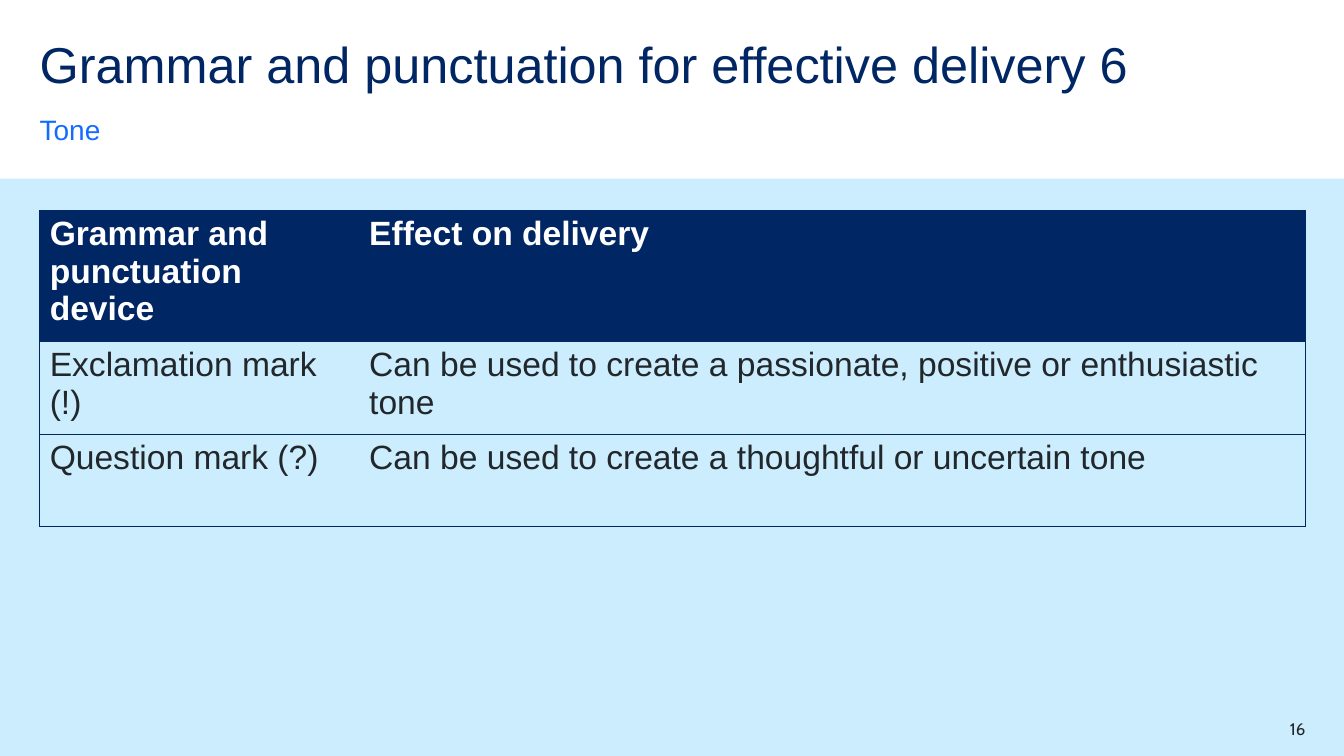
from lxml import etree
from pptx import Presentation
from pptx.dml.color import RGBColor
from pptx.enum import shapes, text
from pptx.oxml import ns
from pptx.util import Cm, Pt

HUES = {"navy": "002664", "blue": "146CFD", "sky": "CBEDFD",
        "ink": "22272B", "white": "FFFFFF"}


def style(run, size, hue, face="Arial", bold=False):
    font = run.font
    font.name, font.size, font.bold = face, Pt(size), bold
    font.color.rgb = RGBColor.from_string(HUES[hue])


def edge(cell, sides):
    """Draw thin navy borders on the given sides; clear the others."""
    props = cell._tc.get_or_add_tcPr()
    for spot, side in enumerate("LRTB"):
        line = etree.Element(ns.qn(f"a:ln{side}"), w=str(Pt(0.5)))
        if side in sides:
            fill = etree.SubElement(line, ns.qn("a:solidFill"))
            etree.SubElement(fill, ns.qn("a:srgbClr"), val=HUES["navy"])
        else:
            etree.SubElement(line, ns.qn("a:noFill"))
        props.insert(spot, line)


deck = Presentation()
deck.slide_width, deck.slide_height = Cm(33.87), Cm(19.05)
slide = deck.slides.add_slide(deck.slide_layouts[6])

# Lower panel
panel = slide.shapes.add_shape(
    shapes.MSO_SHAPE.RECTANGLE, 0, Cm(4.5), Cm(33.87), Cm(14.55))
panel.shadow.inherit = False
panel.fill.solid()
panel.fill.fore_color.rgb = RGBColor.from_string(HUES["sky"])
panel.line.fill.background()

# Title, subtitle and page number
top, low = text.MSO_ANCHOR.TOP, text.MSO_ANCHOR.BOTTOM
left, right = text.PP_ALIGN.LEFT, text.PP_ALIGN.RIGHT
labels = [
    ("Grammar and punctuation for effective delivery 6",
     (1, 1, 28.5, 1.45), 36, "navy", "Arial", top, left, 0.9, 0),
    ("Tone", (1, 2.82, 28, 0.86), 20, "blue", "Arial", low, left, 1.5, 12),
    ("16", (30.9, 18.1, 2, 0.5), 12, "ink", "Cabin", top, right, 1, 0),
]
for words, place, size, hue, face, anchor, align, space, after in labels:
    frame = slide.shapes.add_textbox(*map(Cm, place)).text_frame
    frame.word_wrap = True
    frame.margin_left = frame.margin_right = 0
    frame.margin_top = frame.margin_bottom = 0
    frame.vertical_anchor = anchor
    para = frame.paragraphs[0]
    para.text = words
    para.alignment = align
    para.line_spacing = space
    para.space_after = Pt(after)
    style(para.runs[0], size, hue, face)

# Table of devices
rows = [
    ("Grammar and punctuation device", "Effect on delivery"),
    ("Exclamation mark (!)",
     "Can be used to create a passionate, positive or enthusiastic tone"),
    ("Question mark (?)",
     "Can be used to create a thoughtful or uncertain tone"),
]
table = slide.shapes.add_table(
    len(rows), 2, Cm(1), Cm(5.3), Cm(31.9), Cm(6.99)).table
table.horz_banding = False
for col, width in zip(table.columns, (8.05, 23.85)):
    col.width = Cm(width)
for r, row in enumerate(rows):
    table.rows[r].height = Cm(2.33)
    head = r == 0
    for c, words in enumerate(row):
        cell = table.cell(r, c)
        cell.text = words
        style(cell.text_frame.paragraphs[0].runs[0], 24,
              "white" if head else "ink", bold=head)
        if head:
            cell.fill.solid()
            cell.fill.fore_color.rgb = RGBColor.from_string(HUES["navy"])
        else:
            cell.fill.background()
        edge(cell, "TB" + "LR"[c])

deck.save("out.pptx")
